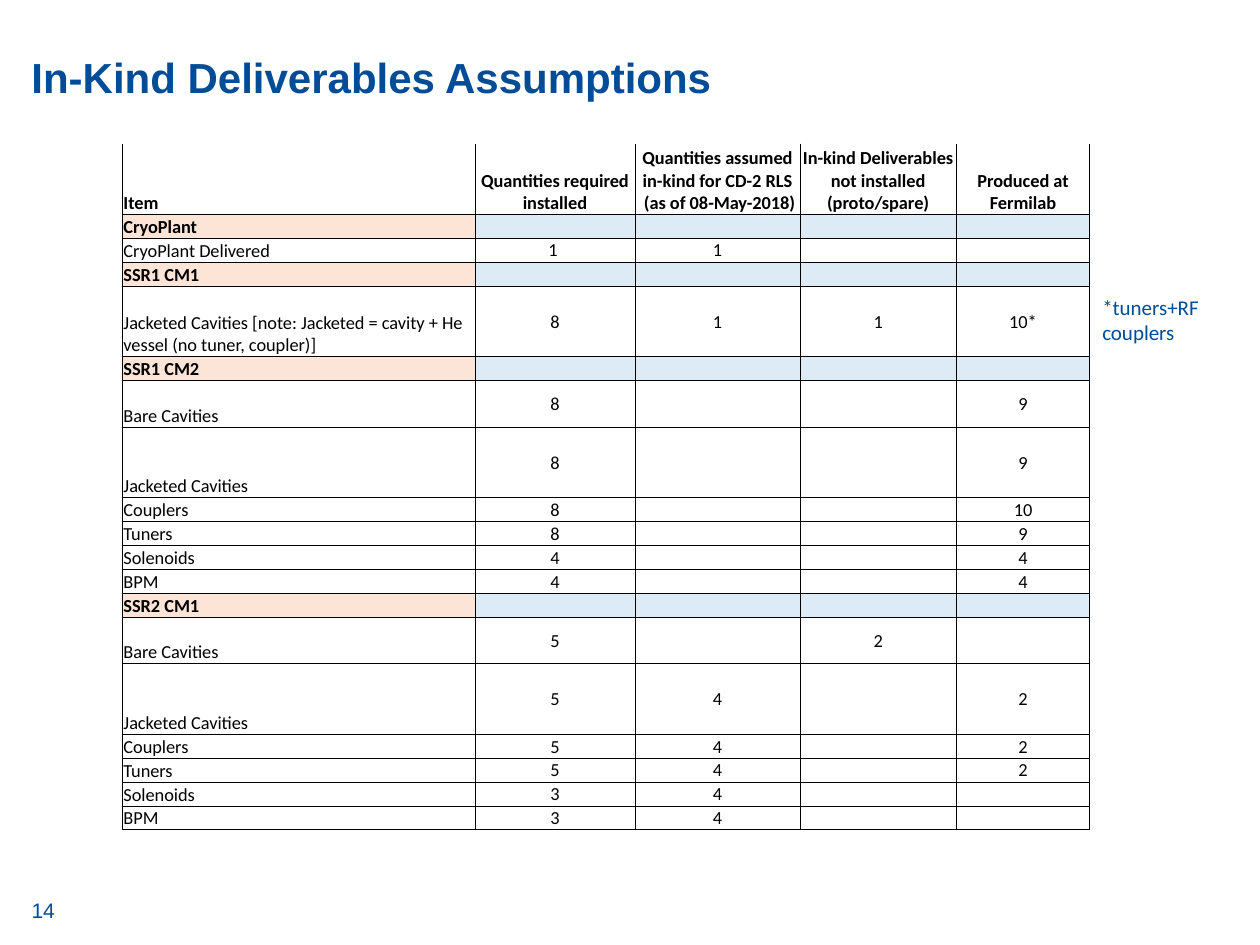
from dataclasses import dataclass

from lxml.etree import SubElement as Sub
from pptx import Presentation as Deck
from pptx.dml.color import RGBColor as Rgb
from pptx.enum.text import MSO_ANCHOR as Anchor, PP_ALIGN as Align
from pptx.oxml.ns import qn
from pptx.util import Inches, Pt


@dataclass(frozen=True)
class Theme:
    blue: str = "004C97"
    black: str = "000000"
    peach: str = "FCE4D6"
    pale: str = "DDEBF7"
    head: str = "Arial"
    body: str = "Calibri"
    title: float = 24
    note: float = 12
    cell: float = 10.5
    rule: float = 0.5


@dataclass(frozen=True)
class Label:
    text: str
    box: tuple[float, float, float, float]
    font: str
    size: float
    bold: bool = False
    inset: tuple[float, float] = (0, 0)
    anchor: Anchor = Anchor.TOP


@dataclass(frozen=True)
class Row:
    name: str
    vals: tuple[str, ...] = ("",) * 4
    high: float = 0.19
    kind: str = "item"


LOOK = Theme()
MID, TALL = 0.37, 0.56
COLS = (2.8, 1.27, 1.31, 1.24, 1.06)
ROWS = (
    Row("Item", ("Quantities required installed",
                 "Quantities assumed in-kind for CD-2 RLS\n (as of 08-May-2018)",
                 "In-kind Deliverables not installed (proto/spare)",
                 "Produced at Fermilab"), TALL, "head"),
    Row("CryoPlant", kind="group"),
    Row("CryoPlant Delivered", ("1 ", "1", "", "")),
    Row("SSR1 CM1", kind="group"),
    Row("Jacketed Cavities [note: Jacketed = cavity + He vessel (no tuner, coupler)]",
        ("8", "1", "1", "10*"), TALL),
    Row("SSR1 CM2", kind="group"),
    Row("Bare Cavities", ("8", "", "", "9"), MID),
    Row("Jacketed Cavities", ("8", "", "", "9"), TALL),
    Row("Couplers", ("8", "", "", "10")),
    Row("Tuners", ("8", "", "", "9")),
    Row("Solenoids", ("4", "", "", "4")),
    Row("BPM", ("4", "", "", "4")),
    Row("SSR2 CM1", kind="group"),
    Row("Bare Cavities", ("5", "", "2", ""), MID),
    Row("Jacketed Cavities", ("5", "4", "", "2"), TALL),
    Row("Couplers", ("5", "4", "", "2")),
    Row("Tuners", ("5", "4", "", "2")),
    Row("Solenoids", ("3", "4", "", "")),
    Row("BPM", ("3", "4", "", "")),
)
LABELS = (
    Label("In-Kind Deliverables Assumptions", (0.25, 0.11, 9.5, 0.7),
          LOOK.head, LOOK.title, True, anchor=Anchor.BOTTOM),
    Label("14", (0.25, 7.12, 0.49, 0.26), LOOK.head, LOOK.note),
    Label("*tuners+RF couplers", (8.65, 2.29, 1.03, 0.5),
          LOOK.body, LOOK.note, inset=(0.1, 0.05)),
)


def write(para, text: str, font: str, size: float, color: str, bold: bool) -> None:
    for i, line in enumerate(text.split("\n")):
        if i:
            para.add_line_break()
        run = para.add_run()
        run.text = line
        run.font.name = font
        run.font.size = Pt(size)
        run.font.bold = bold
        run.font.color.rgb = Rgb.from_string(color)


def label(slide, item: Label) -> None:
    frame = slide.shapes.add_textbox(*map(Inches, item.box)).text_frame
    frame.word_wrap = True
    frame.vertical_anchor = item.anchor
    side, end = map(Inches, item.inset)
    frame.margin_left = frame.margin_right = side
    frame.margin_top = frame.margin_bottom = end
    write(frame.paragraphs[0], item.text, item.font, item.size, LOOK.blue, item.bold)


def edge(cell, top: bool) -> None:
    props = cell._tc.get_or_add_tcPr()
    for side in "LRTB":
        line = Sub(props, qn(f"a:ln{side}"), w=str(Pt(LOOK.rule)))
        if side == "T" and not top:
            Sub(line, qn("a:noFill"))
        else:
            fill = Sub(line, qn("a:solidFill"))
            Sub(fill, qn("a:srgbClr"), val=LOOK.black)


def fill(cell, row: Row, col: int) -> None:
    if row.kind == "group":
        cell.fill.solid()
        tint = LOOK.pale if col else LOOK.peach
        cell.fill.fore_color.rgb = Rgb.from_string(tint)
    else:
        cell.fill.background()


def enter(cell, row: Row, col: int, text: str) -> None:
    cell.margin_left = cell.margin_right = cell.margin_top = Inches(0.01)
    cell.margin_bottom = 0
    low = col == 0 or row.kind == "head" or row.name == "BPM"
    cell.vertical_anchor = Anchor.BOTTOM if low else Anchor.MIDDLE
    edge(cell, row.kind != "head")
    fill(cell, row, col)
    para = cell.text_frame.paragraphs[0]
    para.alignment = Align.CENTER if col else Align.LEFT
    if text:
        write(para, text, LOOK.body, LOOK.cell, LOOK.black, row.kind != "item")
    else:
        Sub(para._p, qn("a:endParaRPr"), sz=str(int(LOOK.cell * 100)))


def grid(slide) -> None:
    spot = map(Inches, (0.97, 1.14, sum(COLS), sum(r.high for r in ROWS)))
    table = slide.shapes.add_table(len(ROWS), len(COLS), *spot).table
    table.first_row = table.horz_banding = False
    for col, wide in zip(table.columns, COLS):
        col.width = Inches(wide)
    for i, row in enumerate(ROWS):
        table.rows[i].height = Inches(row.high)
        for j, text in enumerate((row.name, *row.vals)):
            enter(table.cell(i, j), row, j, text)


def main() -> None:
    deck = Deck()
    deck.slide_width, deck.slide_height = Inches(10), Inches(7.5)
    slide = deck.slides.add_slide(deck.slide_layouts[6])
    grid(slide)
    for item in LABELS:
        label(slide, item)
    deck.save("out.pptx")


if __name__ == "__main__":
    main()
